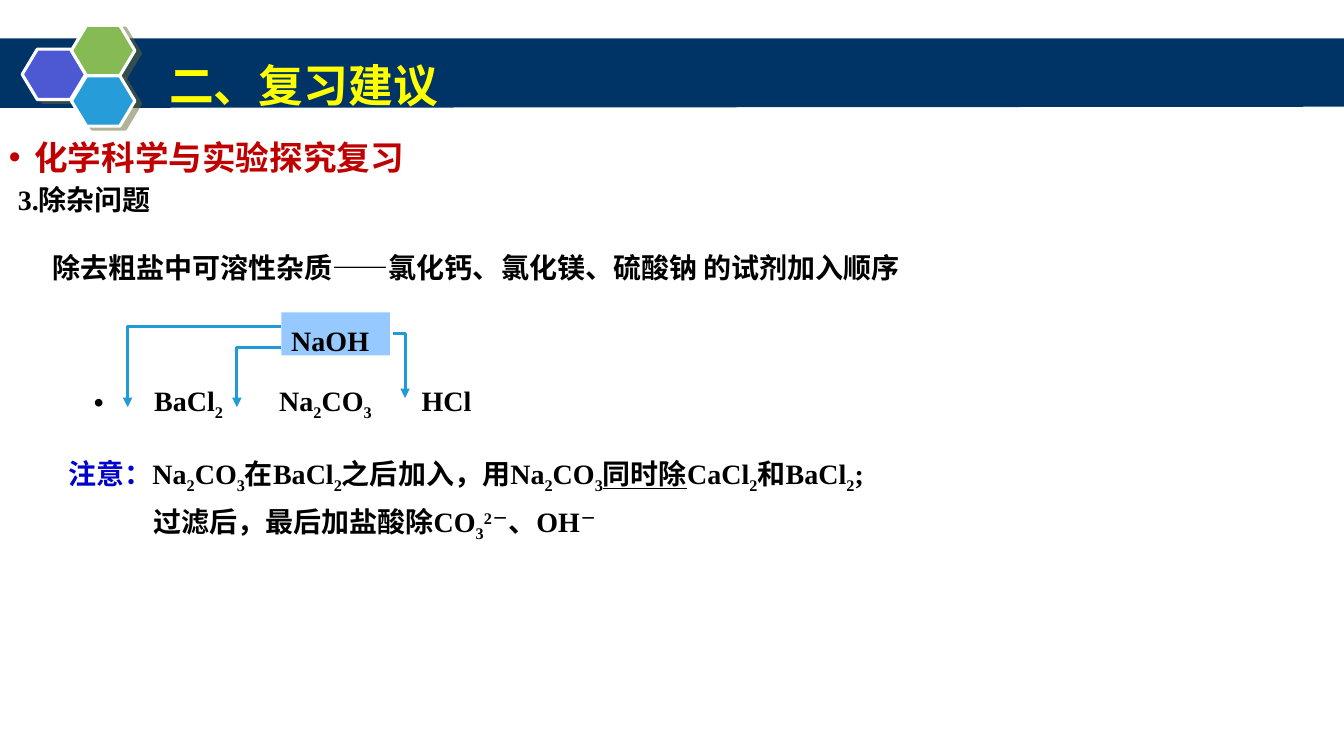
from lxml import etree
from pptx import Presentation
from pptx.dml.color import RGBColor
from pptx.enum.shapes import MSO_CONNECTOR, MSO_SHAPE
from pptx.enum.text import MSO_ANCHOR, MSO_AUTO_SIZE, PP_ALIGN
from pptx.oxml.ns import qn
from pptx.util import Cm, Pt

HEX, RECT = MSO_SHAPE.HEXAGON, MSO_SHAPE.RECTANGLE
ELBOW = MSO_CONNECTOR.ELBOW
TOP, LEFT, FIXED = MSO_ANCHOR.TOP, PP_ALIGN.LEFT, MSO_AUTO_SIZE.NONE

NAVY = RGBColor(0x00, 0x33, 0x66)
VIOLET = RGBColor(0x4C, 0x59, 0xD2)
GREEN = RGBColor(0x85, 0xBA, 0x54)
SKY = RGBColor(0x26, 0x9D, 0xD8)
ARROW = RGBColor(0x21, 0x9B, 0xD8)
PALE = RGBColor(0x95, 0xC9, 0xFF)
RED = RGBColor(0xC0, 0x00, 0x00)
BLUE = RGBColor(0x00, 0x00, 0xCC)
YELLOW = RGBColor(0xFF, 0xFF, 0x00)
WHITE = RGBColor(0xFF, 0xFF, 0xFF)
BLACK = RGBColor(0x00, 0x00, 0x00)
SERIF, SANS = "Times New Roman", "Noto Sans CJK SC"


def add(parent, tag, **attrs):
    """Append a DrawingML element with the given attributes."""
    node = etree.SubElement(parent, qn(tag))
    for key, value in attrs.items():
        node.set(key, str(value))
    return node


class Page:
    def __init__(self, slide):
        self.slide = slide
        self.shapes = slide.shapes

    def band(self, points, color):
        start, *rest = [(Cm(x), Cm(y)) for x, y in points]
        outline = self.shapes.build_freeform(*start)
        outline.add_line_segments(rest)
        shape = outline.convert_to_shape()
        shape.shadow.inherit = False
        shape.fill.solid()
        shape.fill.fore_color.rgb = color
        shape.line.fill.background()

    def block(self, kind, at, color):
        shape = self.shapes.add_shape(kind, *map(Cm, at))
        shape.shadow.inherit = False
        shape.fill.solid()
        shape.fill.fore_color.rgb = color
        shape.line.fill.background()
        return shape

    def cell(self, x, y, color):
        shape = self.block(HEX, (x, y, 1.6, 1.27), color)
        shape.adjustments[0] = 0.3
        shape.line.color.rgb = WHITE
        shape.line.width = Pt(2.25)
        effect = shape._element.spPr.find(qn("a:effectLst"))
        shade = add(effect, "a:outerShdw", dist=Pt(4.5), dir=27 * 60000,
                    algn="ctr", rotWithShape=0)
        add(add(shade, "a:srgbClr", val="666633"), "a:alpha", val=50000)

    def fill_text(self, shape, text, size=20, color=BLACK, font=SERIF,
                  space=1.0, hang=None, tabs=(), wrap=True):
        """Marks: | splits runs; _ sub, ^ super, ~ underlined, * blue."""
        frame = shape.text_frame
        frame.auto_size, frame.word_wrap = FIXED, wrap
        frame.vertical_anchor = TOP
        para = frame.paragraphs[0]
        para.alignment, para.line_spacing = LEFT, space
        para.space_before = Pt(0)
        props = para._p.get_or_add_pPr()
        if hang:
            props.set("marL", str(Cm(hang)))
            props.set("indent", str(-Cm(hang)))
            add(props, "a:buFont", typeface="Arial")
            add(props, "a:buChar", char="•")
        else:
            props.set("marL", "0")
            props.set("indent", "0")
            add(props, "a:buNone")
        if tabs:
            stops = add(props, "a:tabLst")
            for stop in tabs:
                add(stops, "a:tab", pos=Cm(stop), algn="l")
        style = para.font
        style.name, style.size, style.bold = font, Pt(size), True
        style.color.rgb = color
        for part in text.split("|"):
            run = para.add_run()
            mark = part[0]
            run.text = part[1:] if mark in "_^~*" else part
            if mark in "_^":
                shift = -25000 if mark == "_" else 30000
                run.font._element.set("baseline", str(shift))
            elif mark == "~":
                run.font.underline = True
            elif mark == "*":
                run.font.color.rgb = BLUE

    def holder(self, index, at, text, **style):
        shape = self.slide.placeholders[index]
        shape.left, shape.top, shape.width, shape.height = map(Cm, at)
        self.fill_text(shape, text, **style)

    def label(self, at, text, **style):
        self.fill_text(self.shapes.add_textbox(*map(Cm, at)), text, **style)

    def arrow(self, *ends):
        link = self.shapes.add_connector(ELBOW, *map(Cm, ends))
        link.line.color.rgb = ARROW
        link.line.width = Pt(2.25)
        props = link._element.spPr
        props.find(qn("a:prstGeom")).set("prst", "bentConnector2")
        add(props.find(qn("a:ln")), "a:tailEnd", type="triangle")
        add(props, "a:effectLst")


def main():
    deck = Presentation()
    deck.slide_width, deck.slide_height = Cm(33.87), Cm(19.05)
    page = Page(deck.slides.add_slide(deck.slide_layouts[3]))

    # Header band and hexagons
    page.band([(-0.08, 0.97), (33.87, 0.97), (33.87, 2.69), (-0.08, 2.72)],
              NAVY)
    for x, y, color in ((0.56, 1.24, VIOLET), (1.8, 0.64, GREEN),
                        (1.8, 1.91, SKY)):
        page.cell(x, y, color)

    # Title and headings
    title = page.slide.shapes.title._element
    title.getparent().append(title)
    page.holder(0, (4.01, 0.64, 7.37, 2.31), "二、复习建议", size=32,
                color=YELLOW, font=SANS, space=1.5, wrap=False)
    page.holder(1, (-0.03, 2.82, 10.72, 1.47), "化学科学与实验探究复习",
                size=24, color=RED, space=1.5, hang=0.64)
    page.label((0.2, 4.57, 4.8, 1.12), "3.除杂问题", space=0.9)
    page.label((1.07, 6.2, 23.06, 1.12),
               "除去粗盐中可溶性杂质——氯化钙、氯化镁、硫酸钠 的试剂加入顺序")

    # Order of reagents
    page.holder(2, (2.11, 9.35, 12.7, 1.35),
                "BaCl|_2|\tNa|_2|CO|_3|\tHCl", space=1.2, hang=1.52,
                tabs=(4.67, 8.26))
    base = page.block(RECT, (7.09, 7.87, 2.74, 1.09), PALE)
    page.fill_text(base, "NaOH", space=1.2)
    page.arrow(9.91, 8.41, 10.21, 10.03)
    page.arrow(7.09, 8.76, 5.97, 10.26)
    page.arrow(7.09, 8.23, 3.22, 10.26)

    # Notes
    page.label((1.47, 11.38, 23.29, 1.12),
               "*注意：|Na|_2|CO|_3|在BaCl|_2|之后加入，用Na|_2|CO|_3|"
               "~同时除|CaCl|_2|和BaCl|_2|;")
    page.label((3.61, 12.6, 20.52, 1.12),
               "过滤后，最后加盐酸除CO|_3|^2－|、OH|^－")

    deck.save("out.pptx")


if __name__ == "__main__":
    main()
